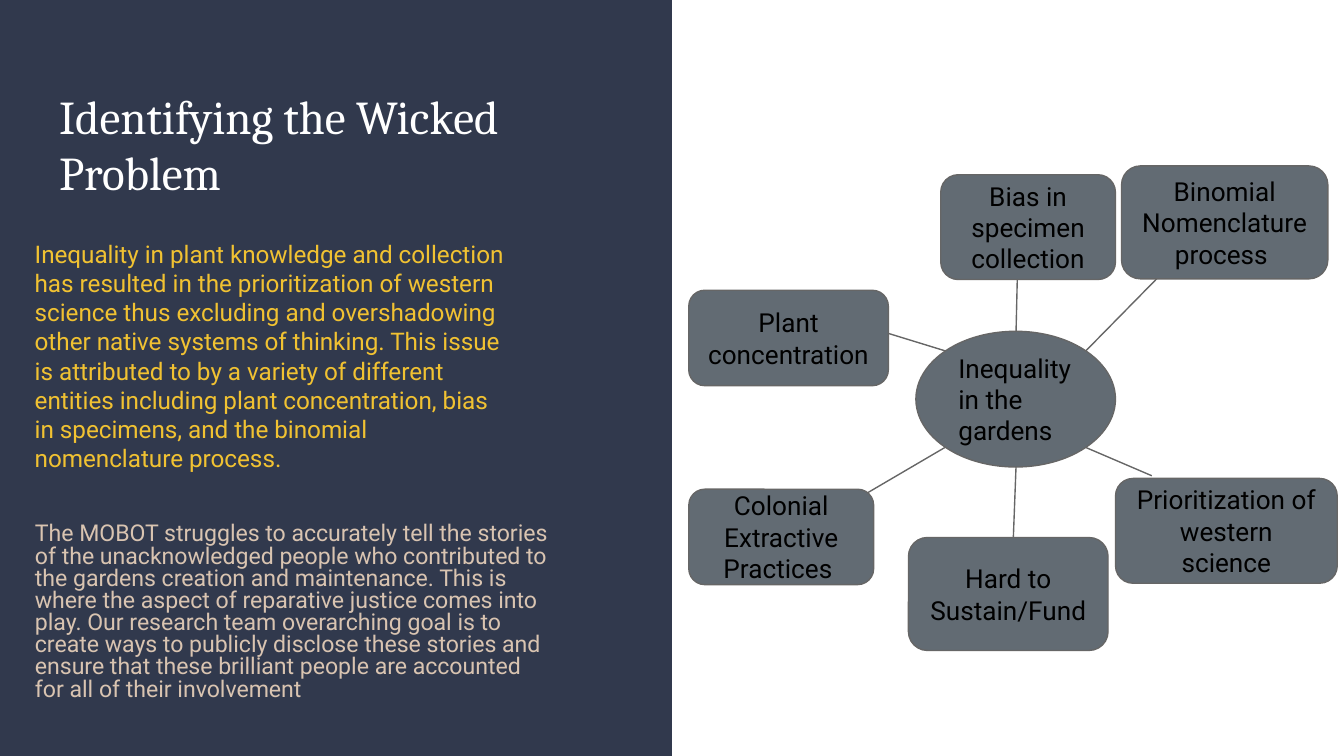
from lxml import etree
from pptx import Presentation
from pptx.dml.color import RGBColor
from pptx.enum.shapes import MSO_CONNECTOR, MSO_SHAPE
from pptx.enum.text import MSO_ANCHOR, MSO_AUTO_SIZE, PP_ALIGN
from pptx.oxml.ns import qn
from pptx.util import Inches, Pt

LEFT, CENTER = PP_ALIGN.LEFT, PP_ALIGN.CENTER
TOP, MIDDLE = MSO_ANCHOR.TOP, MSO_ANCHOR.MIDDLE
RECTANGLE = MSO_SHAPE.RECTANGLE
ROUNDED = MSO_SHAPE.ROUNDED_RECTANGLE
OVAL = MSO_SHAPE.OVAL
STRAIGHT = MSO_CONNECTOR.STRAIGHT

COLUMNS, ROWS = 100, 56.25
CELL = Inches(0.1)
INSET = Inches(0.1)

COLORS = {
    "panel": "31394D",
    "title": "FFFFFF",
    "problem": "F1C232",
    "goal": "D9C4B1",
    "node": "626B73",
    "outline": "666666",
    "label": "000000",
}

TITLE = "Identifying the Wicked Problem"
PROBLEM = (
    "Inequality in plant knowledge and collection has resulted in the "
    "prioritization of western science thus excluding and overshadowing other "
    "native systems of thinking. This issue is attributed to by a variety of "
    "different entities including plant concentration, bias in specimens, and "
    "the binomial nomenclature process."
)
GOAL = (
    "The MOBOT struggles to accurately tell the stories of the unacknowledged "
    "people who contributed to the gardens creation and maintenance. This is "
    "where the aspect of reparative justice comes into play. Our research team "
    "overarching goal is to create ways to publicly disclose these stories and "
    "ensure that these brilliant people are accounted for all of their involvement"
)

HUB = ("Inequality in the gardens", (68.15, 24.65, 14.85, 10.1))
CAUSES = [
    ("Binomial Nomenclature process ", (83.45, 12.35, 15.35, 8.4), (86.9, 19.9), (80.8, 26.1)),
    ("Bias in specimen collection", (70, 13, 13, 7.8), (75.7, 20.5), (75.6, 24.7)),
    ("Plant concentration", (51.25, 21.6, 14.85, 7.1), (65.1, 24.5), (70.3, 26.1)),
    ("Colonial Extractive Practices ", (51.25, 36.4, 13.75, 7.1), (64.5, 36.7), (70.3, 33.3)),
    ("Prioritization of western science", (83, 35.6, 16.5, 7.8), (85.7, 35.4), (80.8, 33.3)),
    ("Hard to Sustain/Fund ", (67.6, 40, 14.85, 8.4), (75.4, 40), (75.6, 34.7)),
]


def cells(values):
    return [round(value * CELL) for value in values]


def color(name):
    return RGBColor.from_string(COLORS[name])


def write_text(shape, text, size, color_name, font="Roboto", align=LEFT,
               anchor=TOP, spacing=1.0):
    frame = shape.text_frame
    frame.word_wrap = True
    frame.auto_size = MSO_AUTO_SIZE.NONE
    frame.vertical_anchor = anchor
    frame.margin_left = frame.margin_right = INSET
    frame.margin_top = frame.margin_bottom = INSET
    frame.text = text
    paragraph = frame.paragraphs[0]
    paragraph.alignment = align
    paragraph.line_spacing = spacing
    paragraph.space_before = Pt(0)
    paragraph.font.name = font
    paragraph.font.size = Pt(size)
    paragraph.font.color.rgb = color(color_name)


def place(shape, area):
    shape.left, shape.top, shape.width, shape.height = cells(area)


def add_panel(slide, area):
    panel = slide.shapes.add_shape(RECTANGLE, *cells(area))
    panel.shadow.inherit = False
    panel.fill.solid()
    panel.fill.fore_color.rgb = color("panel")
    panel.line.fill.background()
    tree = slide.shapes.title.element.getparent()
    tree.insert(tree.index(slide.shapes.title.element), panel.element)


def add_node(slide, kind, text, area, align=CENTER):
    node = slide.shapes.add_shape(kind, *cells(area))
    node.shadow.inherit = False
    node.fill.solid()
    node.fill.fore_color.rgb = color("node")
    node.line.color.rgb = color("outline")
    node.line.width = Pt(0.75)
    write_text(node, text, 14, "label", align=align, anchor=MIDDLE)


def add_link(slide, start, end):
    link = slide.shapes.add_connector(STRAIGHT, *cells(start + end))
    link.line.color.rgb = color("outline")
    link.line.width = Pt(0.75)
    etree.SubElement(link.element.spPr, qn("a:effectLst"))


def main():
    presentation = Presentation()
    presentation.slide_width, presentation.slide_height = cells((COLUMNS, ROWS))
    slide = presentation.slides.add_slide(presentation.slide_layouts[0])

    add_panel(slide, (0, 0, COLUMNS / 2, ROWS))
    title, goal = slide.placeholders
    place(title, (3.4, 5.5, 38.1, 8.4))
    write_text(title, TITLE, 25.2, "title", font="Cambria")
    place(goal, (1.6, 38, 40.5, 16.1))
    write_text(goal, GOAL, 12.4, "goal", spacing=0.8)
    problem = slide.shapes.add_textbox(*cells((1.6, 16.8, 37.5, 18.3)))
    write_text(problem, PROBLEM, 13, "problem")

    add_node(slide, OVAL, *HUB, align=LEFT)
    for text, area, start, end in CAUSES:
        add_link(slide, start, end)
        add_node(slide, ROUNDED, text, area)

    presentation.save("out.pptx")


if __name__ == "__main__":
    main()
